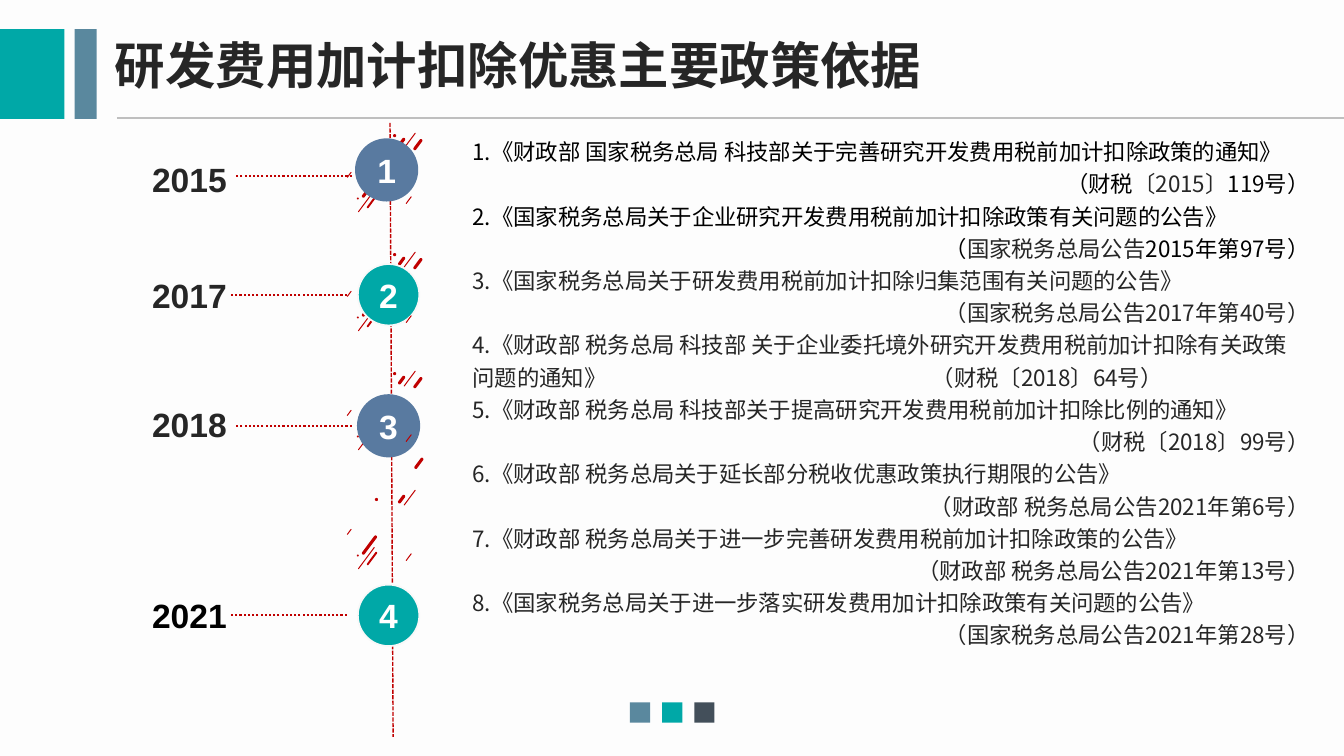
from lxml.etree import SubElement
from pptx import Presentation
from pptx.dml.color import RGBColor
from pptx.enum.dml import MSO_LINE as Dash
from pptx.enum.shapes import MSO_CONNECTOR as Connector, MSO_SHAPE as Shape
from pptx.enum.text import MSO_ANCHOR as Anchor, MSO_AUTO_SIZE as AutoSize, PP_ALIGN as Align
from pptx.oxml.ns import qn
from pptx.util import Pt

TEAL = RGBColor(0x00, 0xA8, 0xA7)
STEEL = RGBColor(0x5A, 0x88, 0x9E)
SLATE = RGBColor(0x43, 0x4F, 0x5A)
BLUE = RGBColor(0x59, 0x7A, 0xA0)
RED = RGBColor(0xC0, 0x00, 0x00)
GREY = RGBColor(0xBF, 0xBF, 0xBF)
INK = RGBColor(0x26, 0x26, 0x26)
BLACK = RGBColor(0x00, 0x00, 0x00)
WHITE = RGBColor(0xFF, 0xFF, 0xFF)
RIM = RGBColor(0xF8, 0xF8, 0xF8)
PAPER = RGBColor(0xFD, 0xFD, 0xFD)

CJK_FONT = "Noto Sans CJK SC"
TITLE_FONT = {"name": "Arial", "size": Pt(36), "bold": True}
STEP_FONT = {"name": "Arial", "size": Pt(24), "bold": True}
BODY_FONT = {"name": CJK_FONT, "size": Pt(16)}
NO_INSETS = {f"margin_{side}": 0 for side in ("left", "top", "right", "bottom")}

# Heading colour, heading, then the runs of the right-aligned citation
REGULATIONS = [
    (BLACK, "1.《财政部 国家税务总局 科技部关于完善研究开发费用税前加计扣除政策的通知》",
     [("（财税", BLACK), ("〔2015〕", INK), ("119号）", BLACK)]),
    (BLACK, "2.《国家税务总局关于企业研究开发费用税前加计扣除政策有关问题的公告》",
     [("（", BLACK), ("国家税务总局公告", INK), ("2015年第97号）", BLACK)]),
    (INK, "3.《国家税务总局关于研发费用税前加计扣除归集范围有关问题的公告》",
     [("（国家税务总局公告2017年第40号）", INK)]),
    (INK, "4.《财政部 税务总局 科技部 关于企业委托境外研究开发费用税前加计扣除有关政策问题的通知》"
          "\t（财税〔2018〕64号）", []),
    (INK, "5.《财政部 税务总局 科技部关于提高研究开发费用税前加计扣除比例的通知》",
     [("（财税〔2018〕99号）", INK)]),
    (INK, "6.《财政部 税务总局关于延长部分税收优惠政策执行期限的公告》",
     [("（财政部 税务总局公告2021年第6号）", INK)]),
    (INK, "7.《财政部 税务总局关于进一步完善研发费用税前加计扣除政策的公告》",
     [("（财政部 税务总局公告2021年第13号）", INK)]),
    (INK, "8.《国家税务总局关于进一步落实研发费用加计扣除政策有关问题的公告》",
     [("（国家税务总局公告2021年第28号）", INK)]),
]

# Year, its colour and top, leader left and y, disc left, top, fill and rim
STEPS = [
    ("2015", INK, 110.2, 168.5, 126, 254.2, 99.4, BLUE, BLUE),
    ("2017", INK, 193, 164.9, 211, 255.6, 188.6, TEAL, RIM),
    ("2018", INK, 285.1, 168.5, 304.6, 255.6, 282.2, BLUE, BLUE),
    ("2021", BLACK, 421.2, 164.9, 439.2, 255.6, 417.6, TEAL, RIM),
]
DISC_SIZE = 43.9
LEADER_LENGTH = 82.8

# Left, top, width and height of the sparks in the first burst
BURST_PITCH = 85
BACK_STROKES = [(265, 138.2, 1.4, 11.5), (262.8, 126, 2.2, 16.6), (261.4, 133.9, 0.7, 19.4),
                (285.8, 97.9, 2.2, 7.2), (292.3, 93.6, 0.7, 13.7)]
FRONT_STROKES = [(291.6, 139.7, 0.7, 6.5), (249.1, 122.4, 0.7, 5)]
LOW_DOT = (254.9, 141.1, 1.4, 1.4)
# These two sit differently in the last burst
TOP_STROKES = [(297.4, 98.6, 2.2, 9.4)] * 3 + [(298.1, 71.2, 2.2, 9.4)]
TOP_DOTS = [(280.8, 95.8, 2.2, 2.2)] * 3 + [(267.8, 100.7, 2.2, 2.2)]


def set_all(target, values):
    for name, value in values.items():
        setattr(target, name, value)


def add_solid(slide, kind, box, fill, rim=None):
    solid = slide.shapes.add_shape(kind, *map(Pt, box))
    solid.shadow.inherit = False
    solid.fill.solid()
    solid.fill.fore_color.rgb = fill
    if rim is None:
        solid.line.fill.background()
    else:
        solid.line.color.rgb = rim
        solid.line.width = Pt(1.25)
    return solid


def add_rule(slide, start, end, color, width, dash=None):
    rule = slide.shapes.add_connector(Connector.STRAIGHT, *map(Pt, start + end))
    rule.line.color.rgb = color
    set_all(rule.line, {"width": Pt(width), "dash_style": dash})
    SubElement(rule._element.spPr, qn("a:effectLst"))


def add_run(paragraph, text, font, color):
    run = paragraph.add_run()
    run.text = text
    set_all(run.font, font)
    run.font.color.rgb = color
    latin = run._r.rPr.find(qn("a:latin"))
    east_asian = SubElement(run._r.rPr, qn("a:ea"), typeface=CJK_FONT)
    latin.addnext(east_asian)


def add_text_frame(slide, box, **frame_format):
    frame = slide.shapes.add_textbox(*map(Pt, box)).text_frame
    set_all(frame, {"word_wrap": True, **frame_format})
    return frame


def add_stroke(slide, box, drop):
    left, top, width, height = box
    stroke = add_solid(slide, Shape.ROUNDED_RECTANGLE, (left, top + drop, width, height), RED)
    stroke.adjustments[0] = 0.5
    stroke.rotation = 216.7


def add_dot(slide, box, drop):
    left, top, width, height = box
    add_solid(slide, Shape.OVAL, (left, top + drop, width, height), RED)


def add_disc(slide, number, left, top, fill, rim):
    disc = add_solid(slide, Shape.OVAL, (left, top, DISC_SIZE, DISC_SIZE), fill, rim)
    frame = disc.text_frame
    set_all(frame, {"word_wrap": False, "vertical_anchor": Anchor.MIDDLE, **NO_INSETS})
    frame.paragraphs[0].alignment = Align.CENTER
    add_run(frame.paragraphs[0], str(number), STEP_FONT, WHITE)


def add_frame_parts(slide):
    """Title with its blocks and rule, and the three squares at the foot."""
    add_solid(slide, Shape.RECTANGLE, (0, 20.9, 46.1, 64.1), TEAL)
    add_solid(slide, Shape.RECTANGLE, (53.3, 20.9, 15.8, 64.1), STEEL)
    add_rule(slide, (83.5, 84.2), (960, 84.2), GREY, 1.5)
    for index, color in enumerate((STEEL, TEAL, SLATE)):
        add_solid(slide, Shape.RECTANGLE, (450 + 23 * index, 501.8, 14.4, 14.4), color)
    title = add_text_frame(slide, (82.1, 24.5, 664.6, 43.9),
                           auto_size=AutoSize.SHAPE_TO_FIT_TEXT, **NO_INSETS)
    add_run(title.paragraphs[0], "研发费用加计扣除优惠主要政策依据", TITLE_FONT, INK)


def add_regulations(slide):
    frame = add_text_frame(slide, (330.5, 91.4, 612, 379.4),
                           auto_size=AutoSize.SHAPE_TO_FIT_TEXT)
    lines = []
    for color, heading, citation in REGULATIONS:
        lines.append((Align.LEFT, [(heading, color)]))
        if citation:
            lines.append((Align.RIGHT, citation))
    for index, (alignment, runs) in enumerate(lines):
        paragraph = frame.add_paragraph() if index else frame.paragraphs[0]
        if "\t" in runs[0][0]:
            tabs = SubElement(paragraph._p.get_or_add_pPr(), qn("a:tabLst"))
            SubElement(tabs, qn("a:tab"), pos=str(Pt(328)), algn="l")
        set_all(paragraph, {"alignment": alignment, "line_spacing": 1.2})
        for text, color in runs:
            add_run(paragraph, text, BODY_FONT, color)


def add_timeline(slide):
    add_rule(slide, (278.6, 87.8), (280.8, 526.3), RED, 1, Dash.SQUARE_DOT)
    for index, step in enumerate(STEPS):
        year, color, year_top, leader_left, leader_y, *disc = step
        drop = BURST_PITCH * index
        for stroke in BACK_STROKES:
            add_stroke(slide, stroke, drop)
        add_disc(slide, index + 1, *disc)
        for stroke in [TOP_STROKES[index], *FRONT_STROKES]:
            add_stroke(slide, stroke, drop)
        for dot in (TOP_DOTS[index], LOW_DOT):
            add_dot(slide, dot, drop)
        label = add_text_frame(slide, (101.5, year_top, 76, 36))
        add_run(label.paragraphs[0], year, STEP_FONT, color)
        add_rule(slide, (leader_left + LEADER_LENGTH, leader_y), (leader_left, leader_y),
                 RED, 1.5, Dash.ROUND_DOT)


def main():
    deck = Presentation()
    set_all(deck, {"slide_width": Pt(960), "slide_height": Pt(540)})
    slide = deck.slides.add_slide(deck.slide_layouts[6])
    slide.background.fill.solid()
    slide.background.fill.fore_color.rgb = PAPER
    add_frame_parts(slide)
    add_regulations(slide)
    add_timeline(slide)
    deck.save("out.pptx")


if __name__ == "__main__":
    main()
